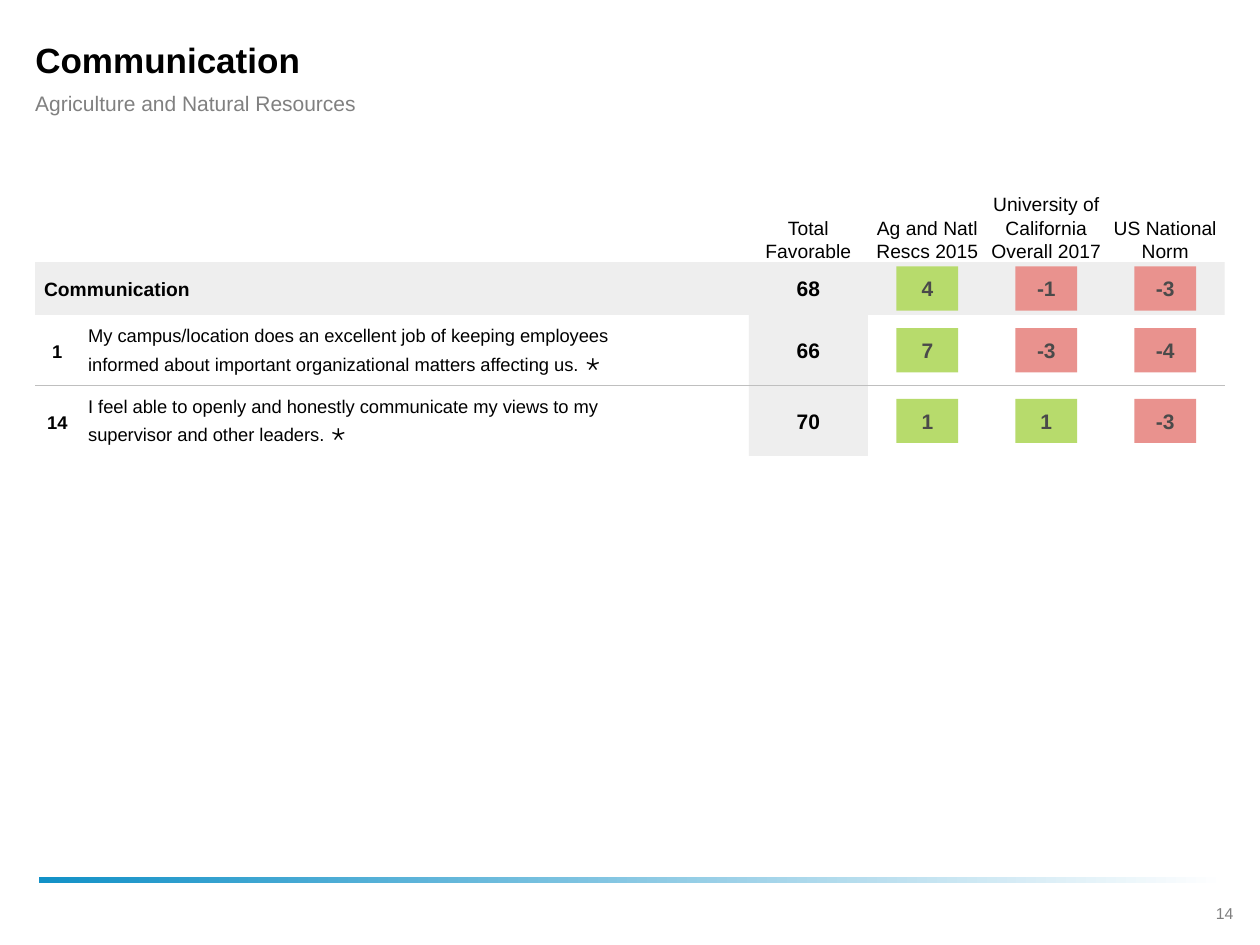
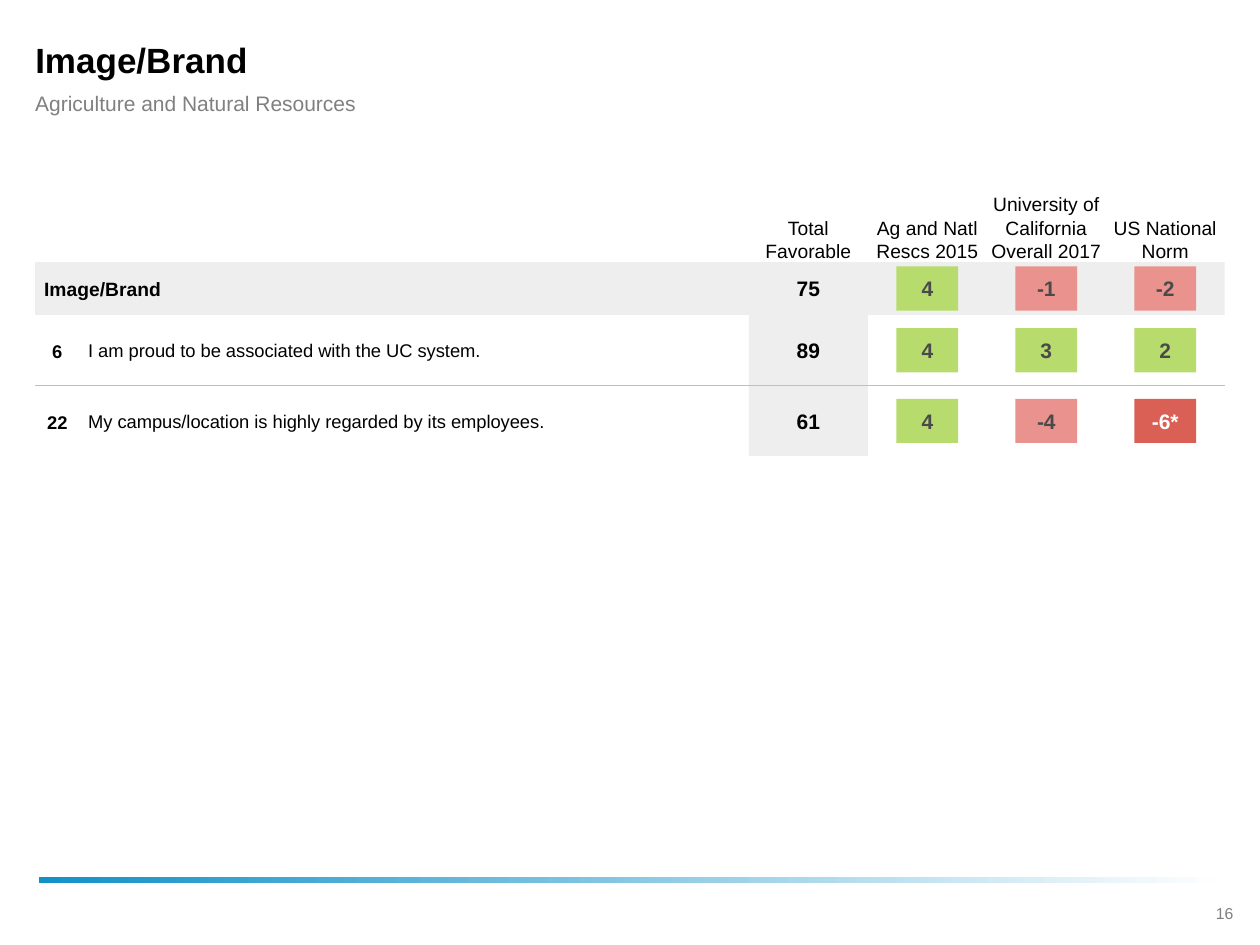
from pptx import Presentation
from pptx.dml.color import RGBColor
from pptx.enum import shapes, text
from pptx.oxml.ns import qn
from pptx.util import Inches, Pt

# Shared look
FONT = "Arial"
BLACK, GREY, BAND, RULE = "000000", "808080", "EEEEEE", "BFBFBF"
UP, DOWN, DOWN_SIG = "B7DB6C", "E9928E", "DA6056"
MIDDLE, BOTTOM = text.MSO_ANCHOR.MIDDLE, text.MSO_ANCHOR.BOTTOM
LEFT, CENTER = text.PP_ALIGN.LEFT, text.PP_ALIGN.CENTER

# Score table geometry: question column 60 %, four score columns 10 % each
TABLE = (0.28, 0.97, 9.44)  # left, top, width
COL_W = TABLE[2] * 0.1
HEAD_H, TOTAL_H, ROW_H = 1.11, 0.42, 0.56
CHIP_W, CHIP_H = 0.49, 0.35
NUMBER_W = 0.35
HEADINGS = ["Total Favorable", "Ag and Natl Rescs 2015",
            "University of California Overall 2017", "US National Norm"]
STAR = " ⋆"

SUBTITLE = "Agriculture and Natural Resources"
SLIDES = [
    dict(page="14", title="Communication", scores=["68", "4", "-1", "-3"], questions=[
        ("1", "My campus/location does an excellent job of keeping employees "
              "informed about important organizational matters affecting us.", STAR,
         ["66", "7", "-3", "-4"]),
        ("14", "I feel able to openly and honestly communicate my views to my "
               "supervisor and other leaders.", STAR,
         ["70", "1", "1", "-3"]),
    ]),
    dict(page="16", title="Image/Brand", scores=["75", "4", "-1", "-2"], questions=[
        ("6", "I am proud to be associated with the UC system.", "",
         ["89", "4", "3", "2"]),
        ("22", "My campus/location is highly regarded by its employees.", "",
         ["61", "4", "-4", "-6*"]),
    ]),
]


def rgb(value):
    return RGBColor.from_string(value)


def add_run(p, content, size, color=BLACK, bold=False):
    r = p.add_run()
    r.text = content
    for name, value in dict(name=FONT, size=Pt(size), bold=bold).items():
        setattr(r.font, name, value)
    r.font.color.rgb = rgb(color)


def write(sp, content, size, color=BLACK, bold=False, align=LEFT, anchor=MIDDLE,
          margins=(0, 0, 0, 0), wrap=True):
    """Fill a shape with one formatted paragraph and return the paragraph."""
    tf = sp.text_frame
    left, top, right, bottom = (Inches(m) for m in margins)
    settings = dict(auto_size=text.MSO_AUTO_SIZE.NONE, word_wrap=wrap,
                    vertical_anchor=anchor, margin_left=left, margin_top=top,
                    margin_right=right, margin_bottom=bottom)
    for name, value in settings.items():
        setattr(tf, name, value)
    p = tf.paragraphs[0]
    p.alignment = align
    add_run(p, content, size, color, bold)
    return p


def add_text(s, box, content, size, **style):
    sp = s.shapes.add_textbox(*(Inches(v) for v in box))
    return write(sp, content, size, **style)


def add_rect(s, box, color=None):
    sp = s.shapes.add_shape(shapes.MSO_SHAPE.RECTANGLE, *(Inches(v) for v in box))
    sp.shadow.inherit = False
    sp.line.fill.background()
    if color:
        sp.fill.solid()
        sp.fill.fore_color.rgb = rgb(color)
    return sp


def add_rule(s, x, y, w):
    line = s.shapes.add_connector(shapes.MSO_CONNECTOR.STRAIGHT, Inches(x), Inches(y),
                                  Inches(x + w), Inches(y))
    line.line.color.rgb = rgb(RULE)
    line.line.width = Pt(0.75)
    sp_pr = line._element.spPr
    sp_pr.append(sp_pr.makeelement(qn("a:effectLst"), {}))


def add_footer(s, page):
    band = add_rect(s, (0.31, 6.96, 9.42, 0.05))
    band.fill.gradient()
    band.fill.gradient_angle = 0
    for stop, (position, color) in zip(band.fill.gradient_stops,
                                       [(0, "1291C7"), (1, "FFFFFF")]):
        stop.position = position
        stop.color.rgb = rgb(color)
    add_text(s, (9.46, 7.12, 0.52, 0.25), page, 9, color="7F7F7F", align=CENTER)


def add_heading(s, title, x, y, w):
    sp = s.shapes.title
    for name, value in dict(left=x, top=y, width=w, height=0.38).items():
        setattr(sp, name, Inches(value))
    margins = (0, 0, 0.35, 0)
    write(sp, title, 20, bold=True, margins=margins)
    add_text(s, (x, y + 0.43, w, 0.21), SUBTITLE, 12, color=GREY, margins=margins)


def add_scores(s, scores, x, y, h):
    """Total as plain text, then one coloured chip per comparison."""
    total, *differences = scores
    add_text(s, (x, y + (h - 0.19) / 2, COL_W, 0.19), total, 12, bold=True, align=CENTER)
    for i, score in enumerate(differences, 1):
        significant = score.endswith("*")
        falling = DOWN_SIG if significant else DOWN
        chip = add_rect(s, (x + i * COL_W + (COL_W - CHIP_W) / 2, y + (h - CHIP_H) / 2,
                            CHIP_W, CHIP_H),
                        falling if score.startswith("-") else UP)
        write(chip, score, 12, color="FFFFFF" if significant else "4A4A4A", bold=True,
              align=CENTER, margins=(0, 0.05, 0, 0.05), wrap=False)


def add_question(s, number, question, star, scores, x, y, score_x):
    add_text(s, (x, y + 0.18, NUMBER_W, 0.22), number, 10.5, bold=True, align=CENTER)
    p = add_text(s, (x + NUMBER_W, y + 0.05, 5.1, 0.46), question, 10.5,
                 margins=(0.07, 0, 0.35, 0))
    if star:
        add_run(p, star, 14)
    add_scores(s, scores, score_x, y, ROW_H)


def add_score_table(s, title, scores, questions, x, y, w):
    score_x = x + w - len(HEADINGS) * COL_W
    total_y = y + HEAD_H
    row_tops = [total_y + TOTAL_H + i * ROW_H for i in range(len(questions))]

    # Grey bands behind the total row and the total column
    for top in row_tops:
        add_rect(s, (score_x, top, COL_W, ROW_H), BAND)
    band = add_rect(s, (x, total_y, w, TOTAL_H), BAND)

    # Column headings
    for i, heading in enumerate(HEADINGS):
        add_text(s, (score_x + i * COL_W, y, COL_W, HEAD_H), heading, 11,
                 align=CENTER, anchor=BOTTOM)

    # Total row, then one row per question
    write(band, title, 11, bold=True, margins=(0.07, 0, 0.07, 0))
    add_scores(s, scores, score_x, total_y, TOTAL_H)
    for top in row_tops[1:]:
        add_rule(s, x, top, w)
    for top, question in zip(row_tops, questions):
        add_question(s, *question, x, top, score_x)


def main():
    prs = Presentation()
    prs.slide_width, prs.slide_height = Inches(10), Inches(7.5)
    for content in SLIDES:
        s = prs.slides.add_slide(prs.slide_layouts[5])
        add_footer(s, content["page"])
        add_heading(s, content["title"], 0.28, 0.28, 9.44)
        add_score_table(s, content["title"], content["scores"], content["questions"], *TABLE)
    prs.save("out.pptx")


if __name__ == "__main__":
    main()
